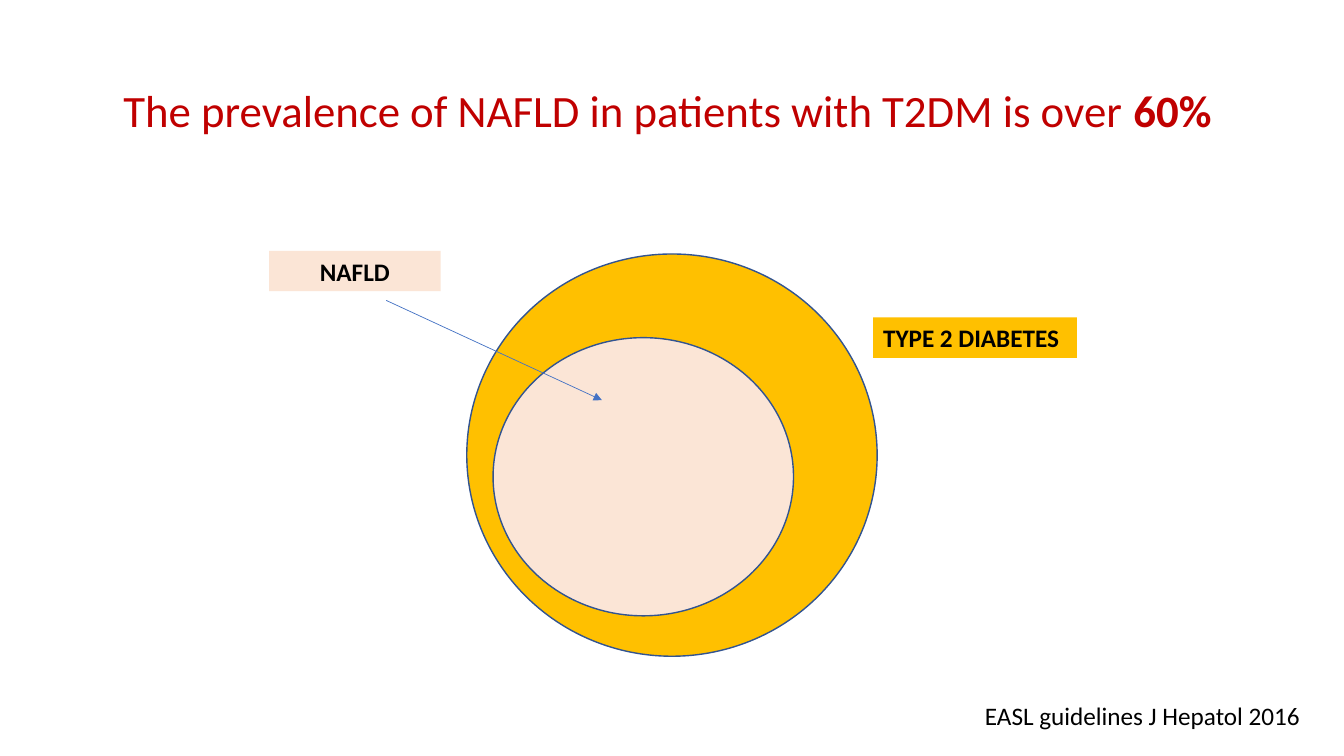
from dataclasses import dataclass

from lxml.etree import SubElement
from pptx import Presentation
from pptx.dml.color import RGBColor
from pptx.enum.shapes import MSO_CONNECTOR, MSO_SHAPE
from pptx.enum.text import MSO_ANCHOR, PP_ALIGN
from pptx.oxml.ns import qn
from pptx.util import Inches, Pt


@dataclass(frozen=True)
class Theme:
    font: str = "Calibri"
    title_size: int = 32
    text_size: int = 18
    title: str = "C00000"
    text: str = "000000"
    diabetes: str = "FFC000"
    nafld: str = "FBE5D6"
    outline: str = "325491"
    arrow: str = "4472C4"


class SlideBuilder:
    def __init__(self, slide, theme):
        self.slide = slide
        self.theme = theme

    def format_run(self, run, size, color, bold=False):
        run.font.name = self.theme.font
        run.font.size = Pt(size)
        run.font.bold = bold
        run.font.color.rgb = RGBColor.from_string(color)

    def title(self, plain, emphasis, box):
        shape = self.slide.shapes.title
        shape.left, shape.top, shape.width, shape.height = map(Inches, box)
        frame = shape.text_frame
        frame.word_wrap = True
        frame.vertical_anchor = MSO_ANCHOR.MIDDLE
        paragraph = frame.paragraphs[0]
        paragraph.alignment = PP_ALIGN.CENTER
        paragraph.line_spacing = 0.9
        for text, bold in ((plain, False), (emphasis, True)):
            run = paragraph.add_run()
            run.text = text
            self.format_run(run, self.theme.title_size, self.theme.title, bold)

    def circle(self, box, fill):
        shape = self.slide.shapes.add_shape(MSO_SHAPE.OVAL, *map(Inches, box))
        shape.shadow.inherit = False
        shape.fill.solid()
        shape.fill.fore_color.rgb = RGBColor.from_string(fill)
        shape.line.color.rgb = RGBColor.from_string(self.theme.outline)
        shape.line.width = Pt(1)

    def label(self, text, box, fill=None, bold=False, align=PP_ALIGN.LEFT):
        shape = self.slide.shapes.add_textbox(*map(Inches, box))
        if fill:
            shape.fill.solid()
            shape.fill.fore_color.rgb = RGBColor.from_string(fill)
        frame = shape.text_frame
        frame.word_wrap = True
        frame.text = text
        paragraph = frame.paragraphs[0]
        paragraph.alignment = align
        self.format_run(paragraph.runs[0], self.theme.text_size, self.theme.text, bold)

    def arrow(self, start, end):
        connector = self.slide.shapes.add_connector(
            MSO_CONNECTOR.STRAIGHT, *map(Inches, start + end))
        connector.line.color.rgb = RGBColor.from_string(self.theme.arrow)
        connector.line.width = Pt(0.5)
        properties = connector.element.spPr
        SubElement(properties.find(qn("a:ln")), qn("a:tailEnd"), type="triangle")
        SubElement(properties, qn("a:effectLst"))


def main():
    presentation = Presentation()
    presentation.slide_width = Inches(13.33)
    presentation.slide_height = Inches(7.5)
    title_only = presentation.slide_layouts[5]
    theme = Theme()
    builder = SlideBuilder(presentation.slides.add_slide(title_only), theme)

    builder.title("The prevalence of NAFLD in patients with T2DM is over ", "60% ",
                  (0.92, 0.4, 11.5, 1.45))
    builder.circle((4.63, 2.52, 4.07, 3.99), theme.diabetes)
    builder.circle((4.89, 3.35, 2.98, 2.76), theme.nafld)
    builder.label("TYPE 2 DIABETES", (8.66, 3.15, 2.02, 0.4), theme.diabetes, bold=True)
    builder.arrow((3.83, 2.98), (5.97, 3.97))
    builder.label("NAFLD", (2.67, 2.49, 1.7, 0.4), theme.nafld, bold=True,
                  align=PP_ALIGN.CENTER)
    builder.label("EASL guidelines J Hepatol 2016", (9.67, 6.9, 4.08, 0.4))
    presentation.save("out.pptx")


if __name__ == "__main__":
    main()
